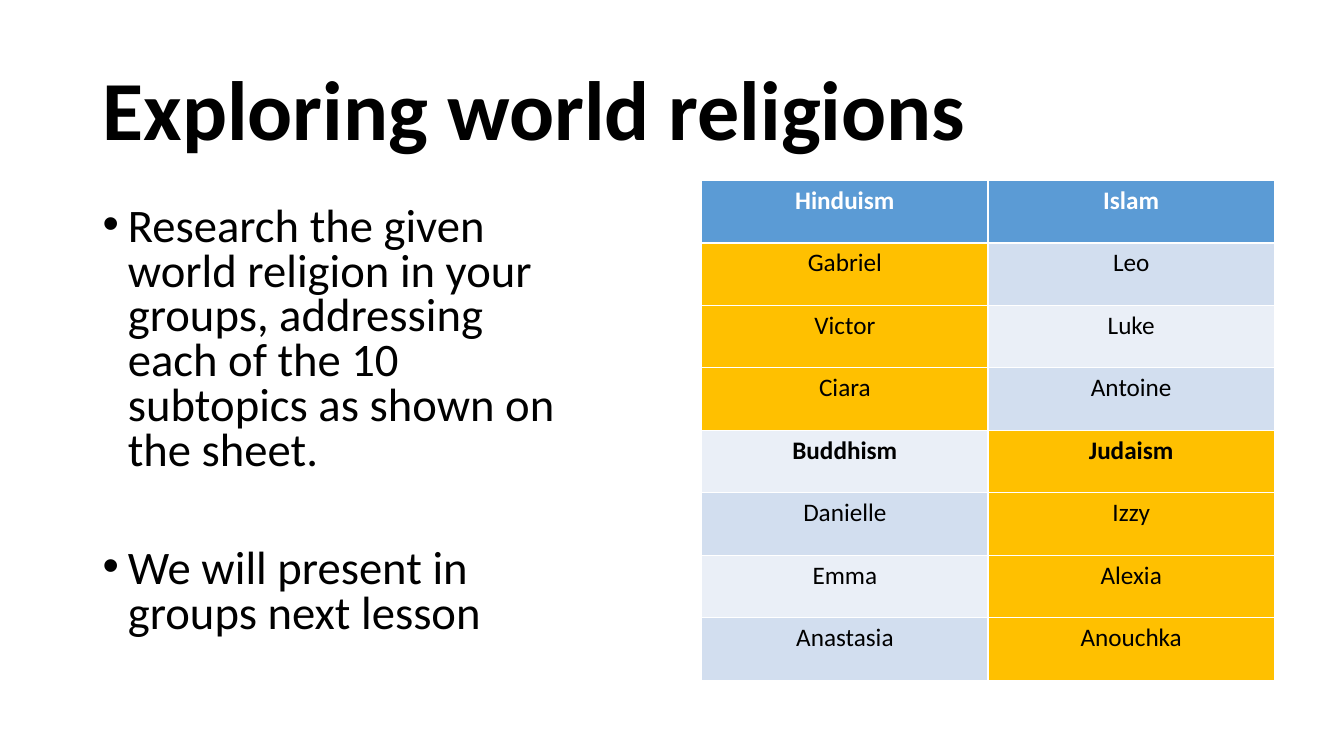
"""Build the 'Exploring world religions' slide with its group table."""
from dataclasses import dataclass

from lxml import etree
from pptx import Presentation
from pptx.dml.color import RGBColor
from pptx.enum.text import MSO_ANCHOR, PP_ALIGN
from pptx.oxml.ns import qn
from pptx.util import Inches, Pt

CENTER, LEFT = PP_ALIGN.CENTER, PP_ALIGN.LEFT
MIDDLE, TOP = MSO_ANCHOR.MIDDLE, MSO_ANCHOR.TOP

TITLE = "Exploring world religions"
POINTS = [
    "Research the given world religion in your groups, addressing each of "
    "the 10 subtopics as shown on the sheet.",
    "We will present in groups next lesson",
]
GROUPS = [
    [("Hinduism", ["Gabriel", "Victor", "Ciara"]),
     ("Islam", ["Leo", "Luke", "Antoine"])],
    [("Buddhism", ["Danielle", "Emma", "Anastasia"]),
     ("Judaism", ["Izzy", "Alexia", "Anouchka"])],
]
HIGHLIGHTED = {"Hinduism", "Judaism"}


@dataclass(frozen=True)
class Theme:
    font: str = "Calibri"
    text: str = "000000"
    inverse: str = "FFFFFF"
    header: str = "5B9BD5"
    highlight: str = "FFC000"
    bands: tuple = ("EAEFF7", "D2DEEF")
    title_size: float = 60
    body_size: float = 33.3
    cell_size: float = 18


T = Theme()
SLIDE_W, SLIDE_H = 13.33, 7.5
MARGIN = 0.92
TITLE_BOX = (MARGIN, 0.4, 11.5, 1.45)
BODY_BOX = (MARGIN, 2, 4.71, 4.76)
TABLE_LEFT, TABLE_TOP = 6.96, 1.79
COL_W, ROW_H = 2.84, 0.62
INDENT = 0.25
POINT_GAPS = (10, 52.5)


def write(p, text, size, color=T.text, bold=False, **layout):
    for name, value in layout.items():
        setattr(p, name, value)
    r = p.add_run()
    r.text = text
    font = {"name": T.font, "size": Pt(size), "bold": bold}
    for name, value in font.items():
        setattr(r.font, name, value)
    r.font.color.rgb = RGBColor.from_string(color)


def add_text_frame(s, box, anchor):
    tf = s.shapes.add_textbox(*map(Inches, box)).text_frame
    tf.word_wrap = True
    tf.vertical_anchor = anchor
    return tf


def add_bullet(p):
    pPr = p._p.get_or_add_pPr()
    pPr.set("marL", str(Inches(INDENT)))
    pPr.set("indent", str(-Inches(INDENT)))
    etree.SubElement(pPr, qn("a:buFont")).set("typeface", "Arial")
    etree.SubElement(pPr, qn("a:buChar")).set("char", "•")


def add_points(s):
    tf = add_text_frame(s, BODY_BOX, TOP)
    for i, (text, gap) in enumerate(zip(POINTS, POINT_GAPS)):
        p = tf.add_paragraph() if i else tf.paragraphs[0]
        write(p, text, T.body_size, alignment=LEFT, line_spacing=0.8,
              space_before=Pt(gap))
        add_bullet(p)


def add_groups(s):
    block = 1 + len(GROUPS[0][0][1])
    rows, cols = block * len(GROUPS), len(GROUPS[0])
    box = (TABLE_LEFT, TABLE_TOP, cols * COL_W, rows * ROW_H)
    table = s.shapes.add_table(rows, cols, *map(Inches, box)).table
    for b, groups in enumerate(GROUPS):
        for c, (religion, pupils) in enumerate(groups):
            for i, text in enumerate([religion, *pupils]):
                row = b * block + i
                fill = T.highlight if religion in HIGHLIGHTED else T.bands[row % 2]
                color = T.text
                if row == 0:
                    fill, color = T.header, T.inverse
                cell = table.cell(row, c)
                cell.fill.solid()
                cell.fill.fore_color.rgb = RGBColor.from_string(fill)
                write(cell.text_frame.paragraphs[0], text, T.cell_size, color,
                      bold=i == 0, alignment=CENTER)


def main():
    prs = Presentation()
    prs.slide_width, prs.slide_height = Inches(SLIDE_W), Inches(SLIDE_H)
    s = prs.slides.add_slide(prs.slide_layouts[6])
    tf = add_text_frame(s, TITLE_BOX, MIDDLE)
    write(tf.paragraphs[0], TITLE, T.title_size, bold=True, line_spacing=0.9)
    add_points(s)
    add_groups(s)
    prs.save("out.pptx")


if __name__ == "__main__":
    main()
